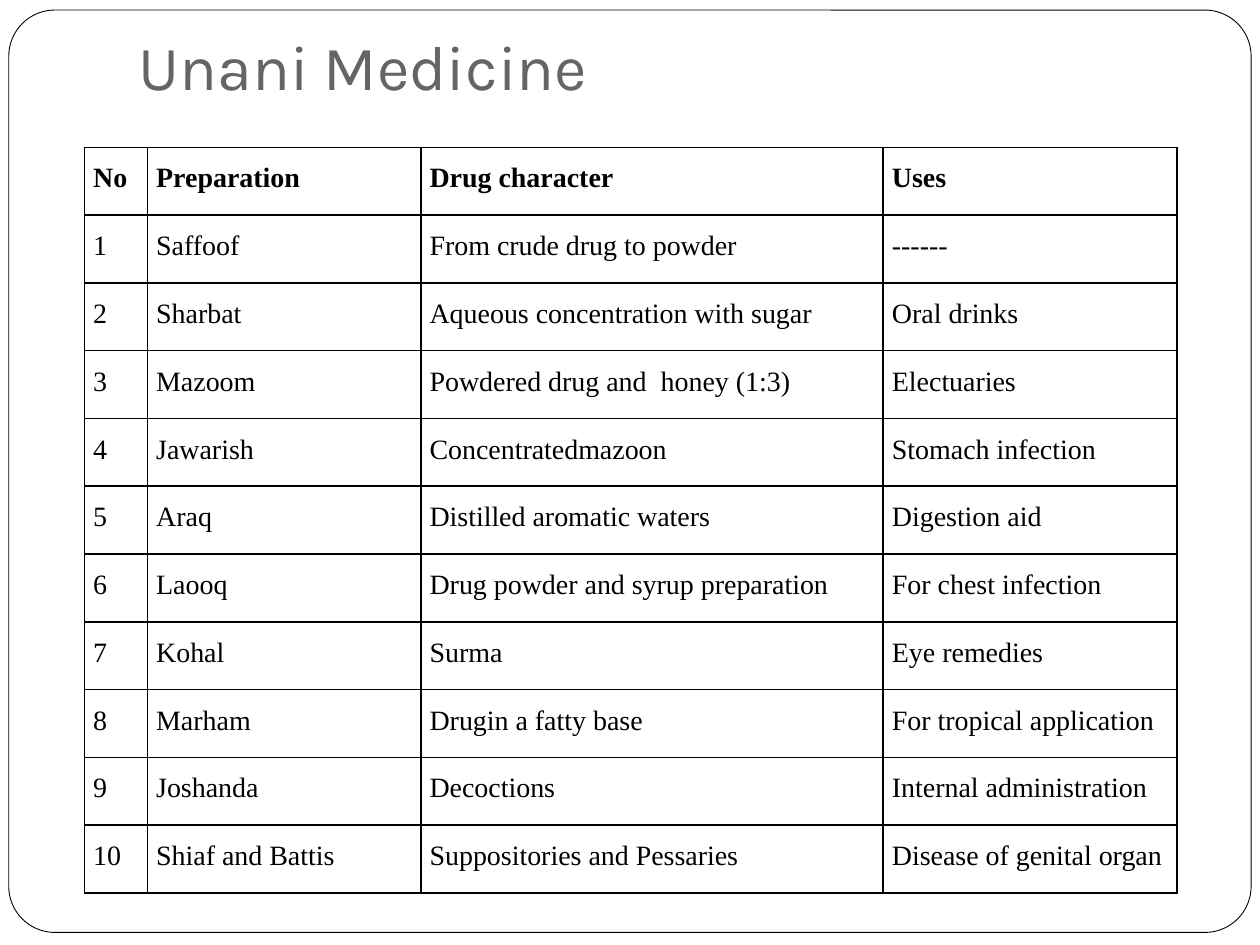
from lxml import etree
from pptx import Presentation
from pptx import util as u
from pptx.dml.color import RGBColor
from pptx.enum import shapes, text
from pptx.oxml.ns import qn

TITLE = "Unani Medicine"
ROWS = [
    ("No", "Preparation", "Drug character", "Uses"),
    ("1", "Saffoof", "From crude drug to powder", "------"),
    ("2", "Sharbat", "Aqueous concentration with sugar", "Oral drinks"),
    ("3", "Mazoom", "Powdered drug and  honey (1:3)", "Electuaries"),
    ("4", "Jawarish", "Concentratedmazoon", "Stomach infection"),
    ("5", "Araq", "Distilled aromatic waters", "Digestion aid"),
    ("6", "Laooq", "Drug powder and syrup preparation", "For chest infection"),
    ("7", "Kohal", "Surma", "Eye remedies"),
    ("8", "Marham", "Drugin a fatty base", "For tropical application"),
    ("9", "Joshanda", "Decoctions", "Internal administration"),
    ("10", "Shiaf and Battis", "Suppositories and Pessaries", "Disease of genital organ"),
]
COLUMNS = (0.5, 2.17, 3.67, 2.33)
TABLE_LEFT, TABLE_TOP, TABLE_HEIGHT = 0.67, 1.17, 5.92
BLACK, WHITE, GREY = "000000", "FFFFFF", "696464"


def colour(value):
    return RGBColor.from_string(value)


def inches(*values):
    return [u.Inches(value) for value in values]


def set_insets(frame, left, top, right, bottom):
    frame.margin_left, frame.margin_top, frame.margin_right, frame.margin_bottom = inches(
        left, top, right, bottom)


def add_span(para, words, font, size, ink, bold=False):
    span = para.add_run()
    span.text = words
    span.font.name, span.font.size, span.font.bold = font, u.Pt(size), bold
    span.font.color.rgb = colour(ink)


def add_frame(page):
    frame = page.shapes.add_shape(
        shapes.MSO_SHAPE.ROUNDED_RECTANGLE, *inches(0.07, 0.08, 9.86, 7.32))
    frame.adjustments[0] = 0.05
    frame.shadow.inherit = False
    frame.fill.solid()
    frame.fill.fore_color.rgb = colour(WHITE)
    frame.line.color.rgb = colour(BLACK)
    frame.line.width = u.Pt(0.5)


def add_title(page):
    box = page.shapes.add_textbox(*inches(1, 0.3, 8.5, 0.62)).text_frame
    box.word_wrap = True
    box.vertical_anchor = text.MSO_ANCHOR.BOTTOM
    set_insets(box, 0.1, 0.05, 0.1, 0.1)
    add_span(box.paragraphs[0], TITLE, "Karla", 36, GREY)


def draw_borders(cell):
    properties = cell._tc.get_or_add_tcPr()
    for position, side in enumerate(("lnL", "lnR", "lnT", "lnB")):
        line = etree.Element(qn(f"a:{side}"), w=str(u.Pt(1)))
        fill = etree.SubElement(line, qn("a:solidFill"))
        etree.SubElement(fill, qn("a:srgbClr"), val=BLACK)
        properties.insert(position, line)


def fill_cell(cell, words, header):
    set_insets(cell, 0.07, 0, 0.07, 0)
    cell.fill.background()
    draw_borders(cell)
    para = cell.text_frame.paragraphs[0]
    para.alignment = text.PP_ALIGN.JUSTIFY
    para.line_spacing = 1.5
    para.space_before = u.Pt(12 if header else 0)
    add_span(para, words, "Times New Roman", 16, BLACK, header)


def add_preparations(page):
    table = page.shapes.add_table(
        len(ROWS), len(COLUMNS),
        *inches(TABLE_LEFT, TABLE_TOP, sum(COLUMNS), TABLE_HEIGHT)).table
    for column, width in zip(table.columns, COLUMNS):
        column.width = u.Inches(width)
    for index, (row, entries) in enumerate(zip(table.rows, ROWS)):
        row.height = u.Inches(TABLE_HEIGHT / len(ROWS))
        for cell, words in zip(row.cells, entries):
            fill_cell(cell, words, index == 0)


def main():
    """Build the slide of Unani preparations."""
    deck = Presentation()
    deck.slide_width, deck.slide_height = inches(10, 7.5)
    page = deck.slides.add_slide(deck.slide_layouts[6])
    add_frame(page)
    add_title(page)
    add_preparations(page)
    deck.save("out.pptx")


if __name__ == "__main__":
    main()
